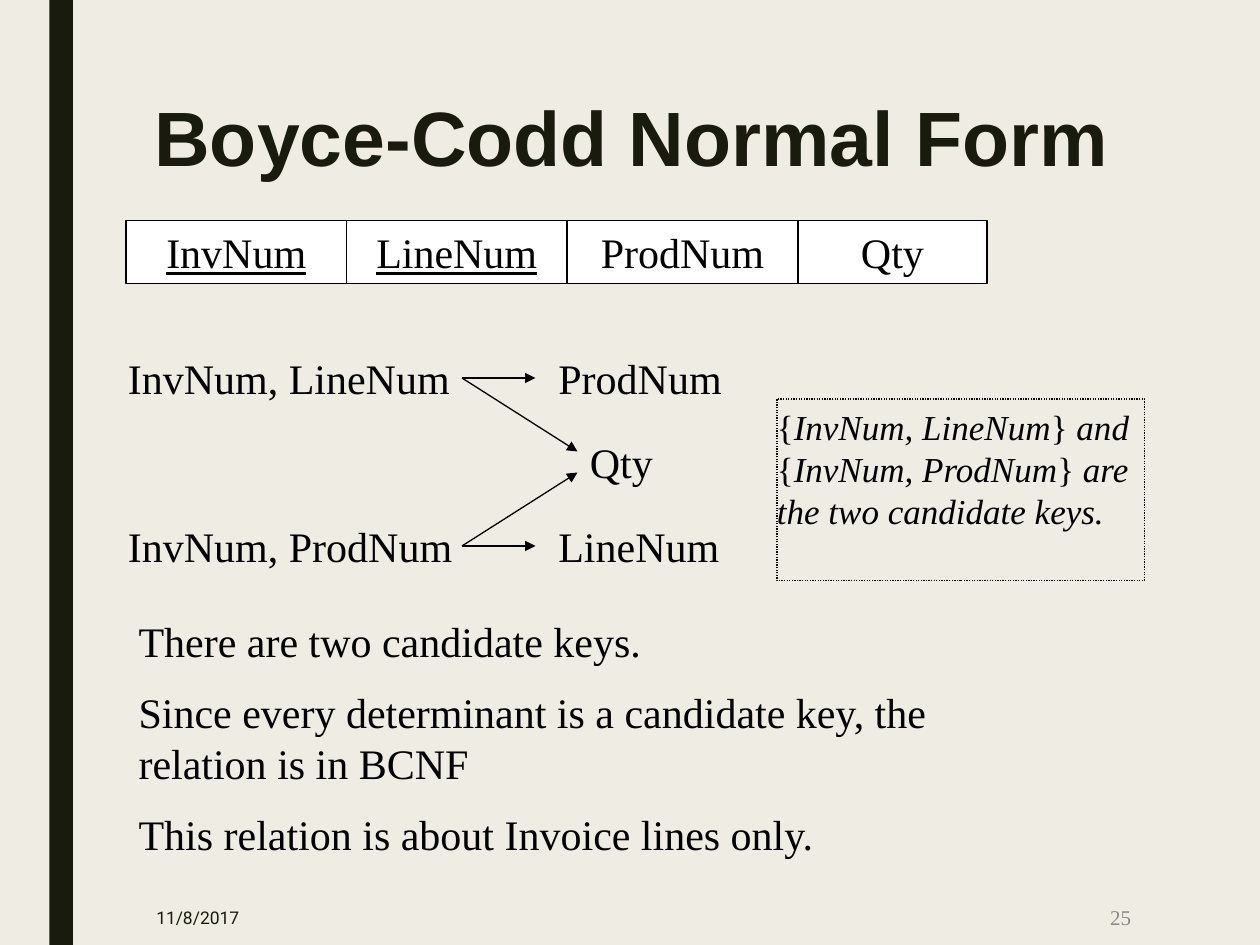
"""Build the Boyce-Codd Normal Form slide on a grid of 120 columns by 90 rows."""
from lxml.etree import SubElement
from pptx import Presentation
from pptx.dml.color import RGBColor
from pptx.enum.dml import MSO_LINE
from pptx.enum.shapes import MSO_CONNECTOR, MSO_SHAPE
from pptx.enum.text import MSO_ANCHOR, MSO_AUTO_SIZE, PP_ALIGN
from pptx.oxml.ns import qn
from pptx.util import Inches, Pt

CREAM = RGBColor(0xEF, 0xED, 0xE3)
DARK = RGBColor(0x19, 0x1B, 0x0E)
BLACK = RGBColor(0, 0, 0)
WHITE = RGBColor(0xFF, 0xFF, 0xFF)
GRAY = RGBColor(0x89, 0x89, 0x89)
SERIF = "Times New Roman"

presentation = Presentation()
presentation.slide_width, presentation.slide_height = Inches(10), Inches(7.5)
unit = presentation.slide_width / 120
slide = presentation.slides.add_slide(presentation.slide_layouts[1])
slide.background.fill.solid()
slide.background.fill.fore_color.rgb = CREAM


def grid(*cells):
    return [round(cell * unit) for cell in cells]


def format_paragraph(paragraph, size, color=BLACK, name=SERIF, align=PP_ALIGN.LEFT):
    paragraph.font.size = Pt(size)
    paragraph.font.name = name
    paragraph.font.color.rgb = color
    paragraph.alignment = align


bar = slide.shapes.add_shape(MSO_SHAPE.RECTANGLE, *grid(4.7, 0, 2.25, 90))
bar.shadow.inherit = False
bar.fill.solid()
bar.fill.fore_color.rgb = DARK
bar.line.fill.background()

title = slide.shapes.title
title.left, title.top, title.width, title.height = grid(13.5, 9, 94.5, 19.5)
title.text_frame.text = "Boyce-Codd Normal Form"
title.text_frame.vertical_anchor = MSO_ANCHOR.TOP
title.text_frame.auto_size = MSO_AUTO_SIZE.NONE
heading = title.text_frame.paragraphs[0]
format_paragraph(heading, 44, DARK, "Arial")
heading.font.bold = True
heading.line_spacing = 0.89

column = 12
for name, width, is_key in [("InvNum", 21, True), ("LineNum", 21, True),
                            ("ProdNum", 22, False), ("Qty", 18, False)]:
    cell = slide.shapes.add_shape(MSO_SHAPE.RECTANGLE, *grid(column, 21, width, 6))
    cell.shadow.inherit = False
    cell.fill.solid()
    cell.fill.fore_color.rgb = WHITE
    cell.line.color.rgb = BLACK
    cell.line.width = Pt(0.75)
    cell.text_frame.text = name
    paragraph = cell.text_frame.paragraphs[0]
    format_paragraph(paragraph, 24, align=PP_ALIGN.CENTER)
    paragraph.font.underline = is_key
    column += width

for text, left, top, width in [("InvNum, LineNum", 11, 33, 37), ("ProdNum", 52, 33, 18),
                               ("Qty", 55, 41, 8.4),
                               ("InvNum, ProdNum", 11, 49, 37), ("LineNum", 52, 49, 18)]:
    label = slide.shapes.add_textbox(*grid(left, top, width, 6))
    label.text_frame.word_wrap = True
    label.text_frame.text = text
    format_paragraph(label.text_frame.paragraphs[0], 24)

for start_row, end_column, end_row in [(36, 51, 36), (52, 51, 52), (36, 55, 43), (52, 55, 45)]:
    arrow = slide.shapes.add_connector(
        MSO_CONNECTOR.STRAIGHT, *grid(44, start_row, end_column, end_row))
    arrow.line.color.rgb = BLACK
    arrow.line.width = Pt(0.75)
    SubElement(arrow.line._get_or_add_ln(), qn("a:tailEnd"), type="triangle")
    SubElement(arrow._element.spPr, qn("a:effectLst"))

body = slide.placeholders[1]
body.left, body.top, body.width, body.height = grid(12, 58, 84, 25.2)
body.text_frame.auto_size = MSO_AUTO_SIZE.NONE
body.text_frame.text = "\n".join([
    "There are two candidate keys.",
    "Since every determinant is a candidate key, the relation is in BCNF",
    "This relation is about Invoice lines only.",
])
for index, paragraph in enumerate(body.text_frame.paragraphs):
    format_paragraph(paragraph, 24)
    paragraph.space_before = Pt(12 if index else 0)
    properties = paragraph._p.get_or_add_pPr()
    properties.set("marL", "0")
    properties.set("indent", "0")
    SubElement(properties, qn("a:buNone"))

note = slide.shapes.add_shape(MSO_SHAPE.RECTANGLE, *grid(74, 38, 35, 17.3))
note.shadow.inherit = False
note.fill.background()
note.line.color.rgb = BLACK
note.line.width = Pt(0.75)
note.line.dash_style = MSO_LINE.ROUND_DOT
note.text_frame.margin_left = 0
note.text_frame.vertical_anchor = MSO_ANCHOR.TOP
paragraph = note.text_frame.paragraphs[0]
format_paragraph(paragraph, 20)
for index, text in enumerate(["{", "InvNum, LineNum", "}", " and ", "{",
                              "InvNum, ProdNum", "}", " are the two candidate keys."]):
    run = paragraph.add_run()
    run.text = text
    run.font.italic = index % 2 == 1

for text, left, width, size, color, name, align in [
        ("11/8/2017", 13.7, 11.9, 10, DARK, "Roboto", PP_ALIGN.LEFT),
        ("25", 93.2, 15.7, 12, GRAY, SERIF, PP_ALIGN.RIGHT)]:
    footer = slide.shapes.add_textbox(*grid(left, 84.7, width, 5.3))
    footer.text_frame.word_wrap = True
    footer.text_frame.vertical_anchor = MSO_ANCHOR.MIDDLE
    footer.text_frame.text = text
    format_paragraph(footer.text_frame.paragraphs[0], size, color, name, align)

presentation.save("out.pptx")
